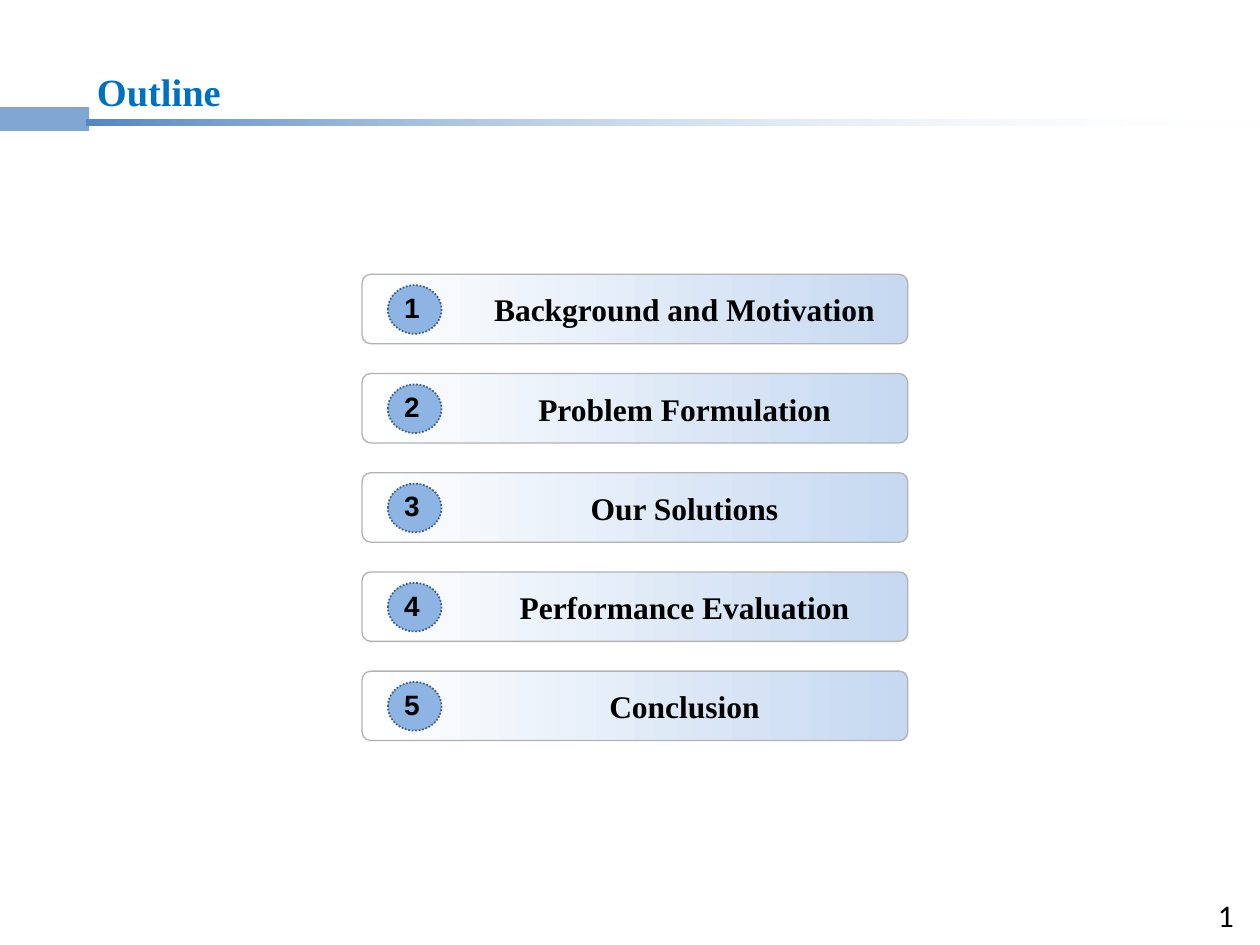
import pptx
import pptx.dml.color
import pptx.enum.dml
import pptx.enum.shapes
import pptx.enum.text
import pptx.oxml.ns
import pptx.util
from lxml import etree
from pptx.util import Cm

RGBColor = pptx.dml.color.RGBColor
Shape = pptx.enum.shapes.MSO_SHAPE
Align = pptx.enum.text.PP_ALIGN

WHITE = RGBColor(0xFF, 0xFF, 0xFF)
BLACK = RGBColor(0x00, 0x00, 0x00)
TITLE_BLUE = RGBColor(0x00, 0x70, 0xC0)
BAND_BLUE = RGBColor(0x54, 0x87, 0xC4)
PALE_BLUE = RGBColor(0xC6, 0xD9, 0xF1)
BADGE_BLUE = RGBColor(0x8E, 0xB4, 0xE3)
BADGE_EDGE = RGBColor(0x3A, 0x5F, 0x8C)
GREY = RGBColor(0xB2, 0xB2, 0xB2)

TOPICS = [
    "Background and Motivation",
    "Problem Formulation",
    "Our Solutions",
    "Performance Evaluation",
    "Conclusion",
]


def write_text(box, text, size, font="Times New Roman", color=BLACK, bold=True,
               align=Align.LEFT, wrap=True):
    frame = box.text_frame
    frame.word_wrap = wrap
    frame.auto_size = pptx.enum.text.MSO_AUTO_SIZE.SHAPE_TO_FIT_TEXT
    frame.vertical_anchor = pptx.enum.text.MSO_ANCHOR.TOP
    para = frame.paragraphs[0]
    para.alignment = align
    span = para.add_run()
    span.text = text
    span.font.size = pptx.util.Pt(size)
    span.font.name = font
    span.font.bold = bold
    span.font.color.rgb = color


def add_filled(shapes, kind, left, top, width, height, colors, alphas=()):
    shape = shapes.add_shape(kind, Cm(left), Cm(top), Cm(width), Cm(height))
    shape.shadow.inherit = False
    shape.line.fill.background()
    if len(colors) == 1:
        shape.fill.solid()
        shape.fill.fore_color.rgb = colors[0]
    else:
        shape.fill.gradient()
        shape.fill.gradient_angle = 0
        for stop, color in zip(shape.fill.gradient_stops, colors):
            stop.color.rgb = color
    fills = shape._element.spPr.iter(pptx.oxml.ns.qn("a:srgbClr"))
    for fill, alpha in zip(list(fills), alphas):
        etree.SubElement(fill, pptx.oxml.ns.qn("a:alpha"), val=str(alpha * 1000))
    return shape


deck = pptx.Presentation()
deck.slide_width = Cm(25.4)
deck.slide_height = Cm(19.05)
page = deck.slides.add_slide(deck.slide_layouts[5])

header = page.shapes.add_group_shape()
add_filled(header.shapes, Shape.RECTANGLE, 0, 2.16, 1.8, 0.48, [BAND_BLUE], [74])
add_filled(header.shapes, Shape.RECTANGLE, 1.75, 2.41, 24, 0.13,
           [BAND_BLUE, WHITE], [100, 0])

title = page.shapes.title
title.left, title.top, title.width, title.height = Cm(1.7), Cm(1.24), Cm(22.4), Cm(1.2)
write_text(title, "Outline", 22, color=TITLE_BLUE)

page_number = page.shapes.add_textbox(Cm(24.3), Cm(17.93), Cm(1.2), Cm(1.02))
write_text(page_number, "1", 18, font="Calibri", bold=False)

for index, topic in enumerate(TOPICS):
    top = 5.53 + 2 * index
    row = page.shapes.add_group_shape().shapes

    bar = add_filled(row, Shape.ROUNDED_RECTANGLE, 7.3, top, 11, 1.4, [WHITE, PALE_BLUE])
    bar.adjustments[0] = 0.125
    bar.line.color.rgb = GREY
    bar.line.width = pptx.util.Pt(0.75)

    label = row.add_textbox(Cm(9.3), Cm(top + 0.2), Cm(9), Cm(1.02))
    write_text(label, topic, 18, align=Align.CENTER)

    badge = add_filled(row, Shape.OVAL, 7.82, top + 0.22, 1.08, 0.98, [BADGE_BLUE])
    badge.line.color.rgb = BADGE_EDGE
    badge.line.width = pptx.util.Pt(1)
    badge.line.dash_style = pptx.enum.dml.MSO_LINE.ROUND_DOT

    number = row.add_textbox(Cm(7.9), Cm(top + 0.2), Cm(0.88), Cm(0.94))
    write_text(number, str(index + 1), 16, font="Arial", wrap=False)

deck.save("out.pptx")
